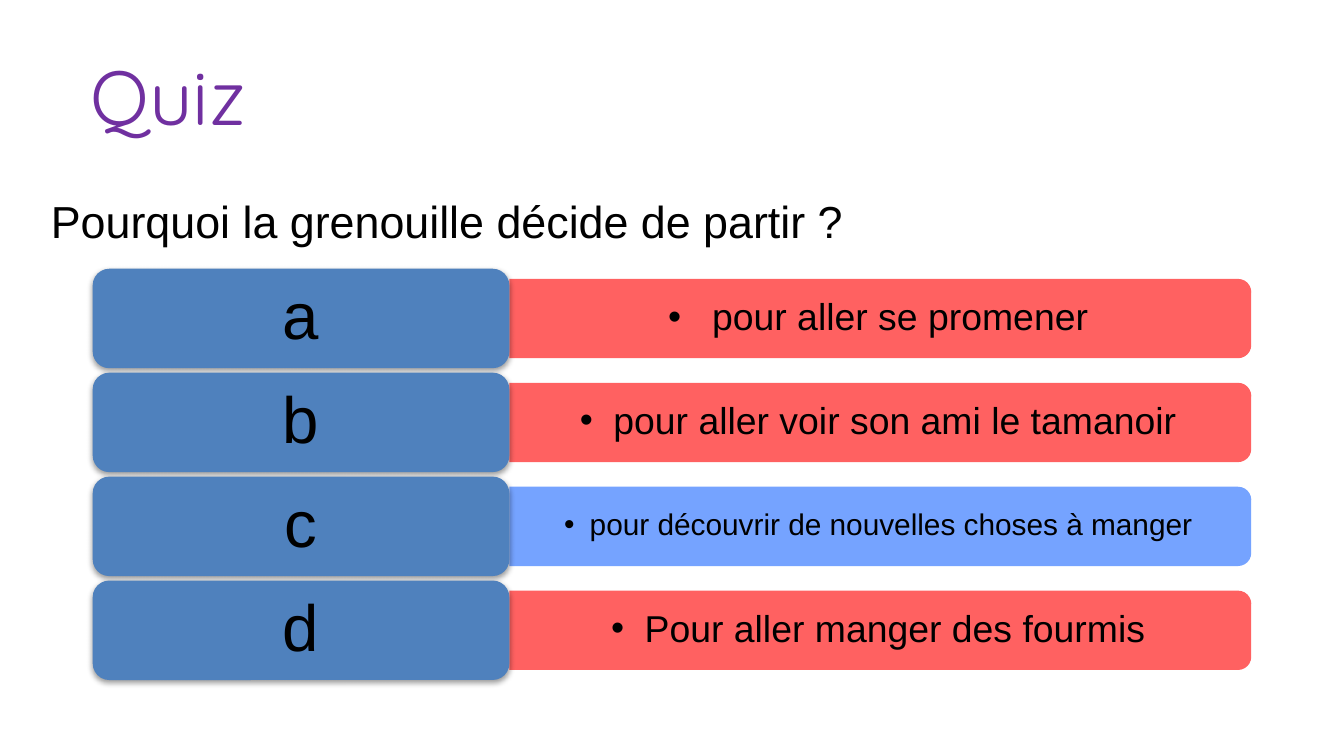
import pptx
import pptx.util
import pptx.dml.color
import pptx.enum.shapes
import pptx.enum.text
import pptx.oxml.ns
from lxml import etree

Inches, Pt = pptx.util.Inches, pptx.util.Pt
RGBColor = pptx.dml.color.RGBColor
SHAPE = pptx.enum.shapes.MSO_SHAPE
ANCHOR = pptx.enum.text.MSO_ANCHOR
ALIGN = pptx.enum.text.PP_ALIGN
qn = pptx.oxml.ns.qn

PURPLE = RGBColor(0x70, 0x30, 0xA0)
BLACK = RGBColor(0, 0, 0)
BLUE = RGBColor(0x4F, 0x81, 0xBD)
WRONG = RGBColor(0xFF, 0x50, 0x50)
RIGHT = RGBColor(0x66, 0x99, 0xFF)

# Content: letter, answer, text size, bullet indent, bar colour
TITLE = "Quiz"
QUESTION = "Pourquoi la grenouille décide de partir ?"
ANSWERS = [
    ("a", " pour aller se promener", 20, 0.25, WRONG),
    ("b", "pour aller voir son ami le tamanoir", 20, 0.25, WRONG),
    ("c", "pour découvrir de nouvelles choses à manger", 16, 0.19, RIGHT),
    ("d", "Pour aller manger des fourmis", 20, 0.25, WRONG),
]

# Layout in inches
SLIDE_W = 10
LABEL_LEFT, LABEL_TOP, LABEL_W, LABEL_H = 0.69, 2.0, 3.1, 0.74
LAST_LABEL_TOP = 4.32
ROW_STEP = (LAST_LABEL_TOP - LABEL_TOP) / (len(ANSWERS) - 1)
BAR_LEFT, BAR_LENGTH, BAR_H = LABEL_LEFT + LABEL_W, 5.52, 0.59
ANSWER_W, ANSWER_H = 5.49, 0.53


def write(shape, text, size, color=BLACK, font="Arial", align=ALIGN.LEFT,
          anchor=ANCHOR.MIDDLE, insets=(0.1, 0.05)):
    frame = shape.text_frame
    frame.word_wrap = True
    frame.vertical_anchor = anchor
    frame.margin_left = frame.margin_right = Inches(insets[0])
    frame.margin_top = frame.margin_bottom = Inches(insets[1])
    paragraph = frame.paragraphs[0]
    paragraph.text = text
    paragraph.alignment = align
    paragraph.font.size = Pt(size)
    paragraph.font.name = font
    paragraph.font.color.rgb = color
    return paragraph


def add_textbox(left, top, width, height):
    return slide.shapes.add_textbox(Inches(left), Inches(top), Inches(width), Inches(height))


def add_filled(kind, left, top, width, height, color):
    shape = slide.shapes.add_shape(
        kind, Inches(left), Inches(top), Inches(width), Inches(height))
    shape.shadow.inherit = False
    shape.fill.solid()
    shape.fill.fore_color.rgb = color
    shape.line.fill.background()
    return shape


def add_bar(middle, color):
    """Upright shape turned a quarter, so its rounded end points right."""
    bar = add_filled(SHAPE.ROUND_2_SAME_RECTANGLE, BAR_LEFT + (BAR_LENGTH - BAR_H) / 2,
                     middle - BAR_LENGTH / 2, BAR_H, BAR_LENGTH, color)
    bar.rotation = 90
    rgb = bar._element.spPr.find(qn("a:solidFill")).find(qn("a:srgbClr"))
    etree.SubElement(rgb, qn("a:alpha"), val="90000")


def add_answer(middle, text, size, indent):
    box = add_textbox(BAR_LEFT, middle - ANSWER_H / 2, ANSWER_W, ANSWER_H)
    paragraph = write(box, text, size, align=ALIGN.CENTER, insets=(0.27, 0.14))
    paragraph.level = 1
    paragraph.line_spacing = 0.9
    props = paragraph._p.get_or_add_pPr()
    props.set("marL", str(Inches(indent)))
    props.set("indent", str(-Inches(indent)))
    etree.SubElement(props, qn("a:buFont"), typeface="Arial")
    etree.SubElement(props, qn("a:buChar"), char="•")
    # The bullet has to come before the default run properties
    props.append(props.find(qn("a:defRPr")))


def add_label(top, letter):
    label = add_filled(SHAPE.ROUNDED_RECTANGLE, LABEL_LEFT, top, LABEL_W, LABEL_H, BLUE)
    effects = label._element.spPr.find(qn("a:effectLst"))
    shadow = etree.SubElement(effects, qn("a:outerShdw"), blurRad=str(Pt(3.1)),
                              dist=str(Pt(1.6)), dir="5400000", rotWithShape="0")
    rgb = etree.SubElement(shadow, qn("a:srgbClr"), val="000000")
    etree.SubElement(rgb, qn("a:alpha"), val="38000")
    write(label, letter, 35, align=ALIGN.CENTER, insets=(0.15, 0.07)).line_spacing = 0.9


# A 16:9 slide
deck = pptx.Presentation()
deck.slide_width, deck.slide_height = Inches(SLIDE_W), Inches(SLIDE_W * 9 / 16)
slide = deck.slides.add_slide(deck.slide_layouts[6])

# Title and question
write(add_textbox(0.67, 0.16, 8.62, 1.09), TITLE, 41, PURPLE, "Quicksand", insets=(0, 0))
write(add_textbox(0.28, 1.39, 8.98, 0.5), QUESTION, 24, anchor=ANCHOR.TOP)

# Answer rows
for row, (letter, answer, size, indent, color) in enumerate(ANSWERS):
    top = LABEL_TOP + row * ROW_STEP
    middle = top + LABEL_H / 2
    add_bar(middle, color)
    add_answer(middle, answer, size, indent)
    add_label(top, letter)

deck.save("out.pptx")
